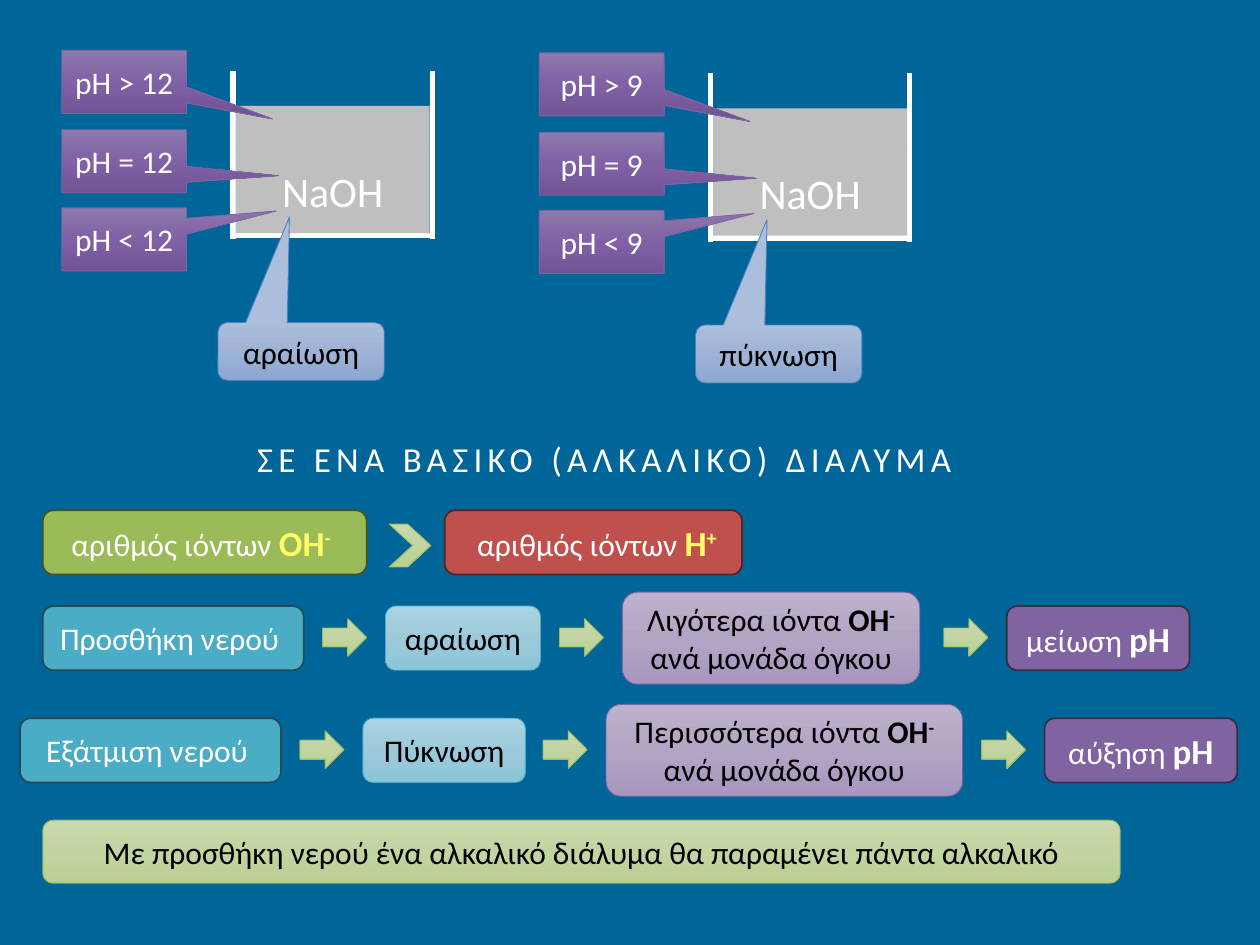
from copy import deepcopy

from lxml import etree
from pptx import Presentation
from pptx.dml.color import RGBColor
from pptx.enum.shapes import MSO_CONNECTOR, MSO_SHAPE
from pptx.enum.text import MSO_ANCHOR, MSO_AUTO_SIZE, PP_ALIGN
from pptx.oxml.ns import qn
from pptx.util import Inches, Pt

RECT = MSO_SHAPE.RECTANGLE
ROUND = MSO_SHAPE.ROUNDED_RECTANGLE
CHEVRON = MSO_SHAPE.CHEVRON
ARROW = MSO_SHAPE.RIGHT_ARROW
CALLOUT = MSO_SHAPE.RECTANGULAR_CALLOUT
ROUND_CALLOUT = MSO_SHAPE.ROUNDED_RECTANGULAR_CALLOUT
STRAIGHT = MSO_CONNECTOR.STRAIGHT
CENTER, LEFT = PP_ALIGN.CENTER, PP_ALIGN.LEFT
MIDDLE, TOP = MSO_ANCHOR.MIDDLE, MSO_ANCHOR.TOP

WHITE, BLACK, YELLOW = "FFFFFF", "000000", "FFFF66"
THEME = {
    "font": "Calibri",
    "background": "006699",
    # style: fill colours, line colour, line width, text colour
    "boxes": {
        "hydroxide": (["9BBB59"], "445227", 1, WHITE),
        "hydrogen": (["C0504D"], "542322", 1, WHITE),
        "cause": (["4BACC6"], "214B57", 1, WHITE),
        "process": (["AAD2E1", "9DCADB", "8BC5D9"], "4BACC6", 0.5, BLACK),
        "ions": (["BDB2CD", "B2A5C4", "A796BE"], "8064A2", 0.5, BLACK),
        "effect": (["8064A2"], "382C47", 1, WHITE),
        "green": (["CADAAF", "C1D4A2", "B9D091"], "9BBB59", 0.5, BLACK),
        "reading": (["8E78AC", "8061A5", "715396"], "8064A2", 0.5, WHITE),
        "change": (["ABBEDB", "9EB3D5", "8CA7D2"], "4F81BD", 0.5, BLACK),
        "liquid": (["BFBFBF"], None, 0, WHITE),
    },
    # role: size, bold, baseline, letter spacing, own colour
    "text": {
        "plain": (18, False, 0, 0, None),
        "bold": (18, True, 0, 0, None),
        "super": (18, True, 30000, 0, None),
        "large": (20, True, 0, 0, None),
        "ion": (20, True, 0, 0, YELLOW),
        "charge": (20, True, 30000, 0, YELLOW),
        "formula": (24, False, 0, 0, None),
        "heading": (20, False, 0, 300, WHITE),
    },
}

deck = Presentation()
deck.slide_width, deck.slide_height = Inches(10), Inches(7.5)
COL, ROW = deck.slide_width / 20, deck.slide_height / 15
page = deck.slides.add_slide(deck.slide_layouts[5])
page.background.fill.solid()
page.background.fill.fore_color.rgb = RGBColor.from_string(THEME["background"])


def write(para, spans, colour):
    for text, role in spans:
        size, bold, baseline, spacing, own = THEME["text"][role]
        span = para.add_run()
        span.text = text
        span.font.name, span.font.size, span.font.bold = THEME["font"], Pt(size), bold
        span.font.color.rgb = RGBColor.from_string(own or colour)
        properties = span._r.get_or_add_rPr()
        if baseline:
            properties.set("baseline", str(baseline))
        if spacing:
            properties.set("spc", str(spacing))


def add_box(kind, style, left, top, width, height, spans=(), adjust=()):
    fills, edge, weight, colour = THEME["boxes"][style]
    box = page.shapes.add_shape(kind, round(left * COL), round(top * ROW),
                                round(width * COL), round(height * ROW))
    box.shadow.inherit = False
    for index, value in enumerate(adjust):
        box.adjustments[index] = value
    if len(fills) == 1:
        box.fill.solid()
        box.fill.fore_color.rgb = RGBColor.from_string(fills[0])
    else:
        box.fill.gradient()
        box.fill.gradient_angle = 270
        first = box.fill.gradient_stops[0]._gs
        first.addnext(deepcopy(first))
        for index, stop in enumerate(box.fill.gradient_stops):
            stop.position = index / 2
            stop.color.rgb = RGBColor.from_string(fills[index])
    if edge:
        box.line.color.rgb = RGBColor.from_string(edge)
        box.line.width = Pt(weight)
    else:
        box.line.fill.background()
    frame = box.text_frame
    frame.word_wrap, frame.vertical_anchor = True, MIDDLE
    frame.paragraphs[0].alignment = CENTER
    write(frame.paragraphs[0], spans, colour)


title = page.shapes.title
title.left, title.top = round(3.88 * COL), round(6.84 * ROW)
title.width, title.height = round(12.58 * COL), round(0.88 * ROW)
title.text_frame.word_wrap = True
title.text_frame.auto_size = MSO_AUTO_SIZE.NONE
title.text_frame.vertical_anchor = TOP
title.text_frame.paragraphs[0].alignment = LEFT
write(title.text_frame.paragraphs[0],
      [("ΣΕ ΕΝΑ ΒΑΣΙΚΟ (ΑΛΚΑΛΙΚΟ) ΔΙΑΛΥΜΑ", "heading")], WHITE)

BOX_HEIGHT = 1.02
add_box(ROUND, "hydroxide", 0.68, 8.1, 5.14, BOX_HEIGHT,
        [("αριθμός ιόντων ", "plain"), ("ΟH", "ion"), ("-", "charge"), (" ", "plain")])
add_box(CHEVRON, "green", 6.18, 8.32, 0.66, 0.68, adjust=[0.56])
add_box(ROUND, "hydrogen", 7.06, 8.1, 4.72, BOX_HEIGHT,
        [(" αριθμός ιόντων ", "plain"), ("H", "ion"), ("+", "charge")])

flows = [
    (9.62, [(0.68, 4.14), (6.12, 2.46), (9.88, 4.72), (15.98, 2.9)],
     ["Προσθήκη νερού ", "αραίωση", "Λιγότερα ιόντα ", "μείωση "]),
    (11.4, [(0.32, 4.14), (5.76, 2.58), (9.62, 5.66), (16.58, 3.06)],
     ["Εξάτμιση νερού ", "Πύκνωση", "Περισσότερα ιόντα ", "αύξηση "]),
]
steps = [
    ("cause", 0, []),
    ("process", 0, []),
    ("ions", 0.22, [("OH", "bold"), ("- ", "super"), ("ανά μονάδα όγκου", "plain")]),
    ("effect", 0, [("pH", "large")]),
]
for top, places, labels in flows:
    for (left, width), label, (style, extra, ending) in zip(places, labels, steps):
        if style != "cause":
            add_box(ARROW, "green", left - 1, top + 0.2, 0.7, 0.6)
        add_box(ROUND, style, left, top - extra, width, BOX_HEIGHT + 2 * extra,
                [(label, "plain")] + ending)

add_box(ROUND, "green", 0.68, 13.02, 17.1, 1,
        [("Με προσθήκη νερού ένα αλκαλικό διάλυμα θα παραμένει πάντα αλκαλικό", "plain")])

walls = [(3.7, 1.12, 3.7, 3.8), (6.86, 1.12, 6.86, 3.8), (3.7, 3.74, 6.82, 3.74)]
readings = [(">", 0.8, (1.19, 0.59)), ("=", 2.06, (1.24, 0.23)), ("<", 3.3, (1.22, -0.45))]
for across, down, value, change in [(0, 0, 12, "αραίωση"), (7.58, 0.04, 9, "πύκνωση")]:
    beaker = page.shapes.add_group_shape()
    for x1, y1, x2, y2 in walls:
        wall = beaker.shapes.add_connector(
            STRAIGHT, round((x1 + across) * COL), round((y1 + down) * ROW),
            round((x2 + across) * COL), round((y2 + down) * ROW))
        wall.line.color.rgb = RGBColor.from_string(WHITE)
        wall.line.width = Pt(3)
        etree.SubElement(wall._element.spPr, qn("a:effectLst"))
    add_box(RECT, "liquid", 3.74 + across, 2.34 + down, 3.08, 1.36, [("NaOH", "formula")])
    add_box(RECT, "liquid", 3.74 + across, 1.68 + down, 3.08, 0.68)
    for sign, top, pointer in readings:
        add_box(CALLOUT, "reading", 0.98 + across, top + down, 1.98, 1,
                [(f"pH {sign} {value}", "plain")], pointer)
    add_box(ROUND_CALLOUT, "change", 3.46 + across, 5.12 + down, 2.64, 0.92,
            [(change, "plain")], (-0.07, -2.32, 0.17))

deck.save("out.pptx")
